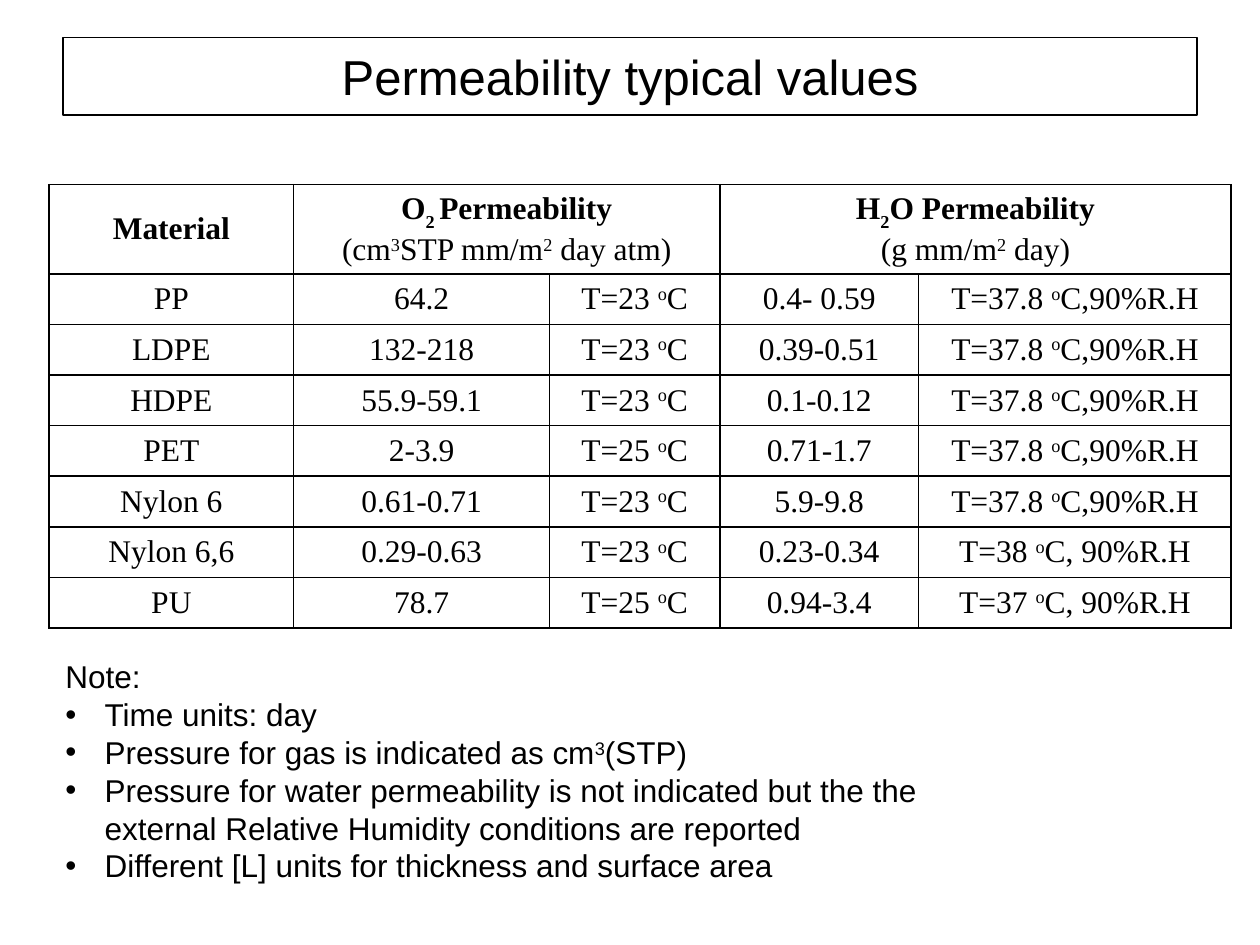
from lxml.etree import SubElement
from pptx import Presentation
from pptx.dml.color import RGBColor
from pptx.enum.shapes import MSO_SHAPE
from pptx.enum.text import MSO_ANCHOR, PP_ALIGN
from pptx.oxml.ns import qn
from pptx.util import Cm, Pt

COLORS = {"text": "000000", "line": "000000", "background": "FFFFFF"}
BASELINES = {"^": "30000", "_": "-30000"}


def write(paragraph, marked_text, font_name, size, bold=False, align=PP_ALIGN.CENTER):
    paragraph.alignment = align
    paragraph.font.name = font_name
    paragraph.font.size = Pt(size)
    paragraph.font.bold = bold
    paragraph.font.color.rgb = RGBColor.from_string(COLORS["text"])
    for part in marked_text.split("|"):
        run = paragraph.add_run()
        run.text = part.lstrip("^_")
        if part[0] in BASELINES:
            run._r.get_or_add_rPr().set("baseline", BASELINES[part[0]])


def add_borders(cell):
    properties = cell._tc.get_or_add_tcPr()
    for position, side in enumerate(("a:lnL", "a:lnR", "a:lnT", "a:lnB")):
        line = properties.makeelement(qn(side), {"w": str(Pt(1))})
        fill = SubElement(line, qn("a:solidFill"))
        SubElement(fill, qn("a:srgbClr"), val=COLORS["line"])
        properties.insert(position, line)


presentation = Presentation()
presentation.slide_width = Cm(25.4)
presentation.slide_height = Cm(19.05)
slide = presentation.slides.add_slide(presentation.slide_layouts[6])

title = slide.shapes.add_shape(MSO_SHAPE.RECTANGLE, Cm(1.27), Cm(0.76), Cm(22.86), Cm(1.56))
title.shadow.inherit = False
title.fill.background()
title.line.color.rgb = RGBColor.from_string(COLORS["line"])
title.line.width = Pt(0.75)
title.text_frame.vertical_anchor = MSO_ANCHOR.MIDDLE
write(title.text_frame.paragraphs[0], "Permeability typical values", "Arial", 28)

header = [
    ["Material"],
    ["O|_2 |Permeability", "(cm|^3|STP mm/m|^2| day atm)"],
    [],
    ["H|_2|O Permeability", "(g mm/m|^2| day)"],
    [],
]
materials = [
    ("PP", "64.2", "23", "0.4- 0.59", "37.8", "90%R.H"),
    ("LDPE", "132-218", "23", "0.39-0.51", "37.8", "90%R.H"),
    ("HDPE", "55.9-59.1", "23", "0.1-0.12", "37.8", "90%R.H"),
    ("PET", "2-3.9", "25", "0.71-1.7", "37.8", "90%R.H"),
    ("Nylon 6", "0.61-0.71", "23", "5.9-9.8", "37.8", "90%R.H"),
    ("Nylon 6,6", "0.29-0.63", "23", "0.23-0.34", "38", " 90%R.H"),
    ("PU", "78.7", "25", "0.94-3.4", "37", " 90%R.H"),
]
rows = [header]
for name, oxygen, oxygen_temperature, water, water_temperature, humidity in materials:
    rows.append([
        [name],
        [oxygen],
        [f"T={oxygen_temperature} |^o|C"],
        [water],
        [f"T={water_temperature} |^o|C,{humidity}"],
    ])

column_widths = [4.93, 5.16, 3.43, 4.01, 6.3]
row_heights = [1.8] + [1.02] * len(materials)
table = slide.shapes.add_table(
    len(rows), len(column_widths), Cm(0.99), Cm(3.72),
    Cm(sum(column_widths)), Cm(sum(row_heights)),
).table
table.first_row = False
table.horz_banding = False
for column, width in zip(table.columns, column_widths):
    column.width = Cm(width)
for row, height in zip(table.rows, row_heights):
    row.height = Cm(height)
for first in (1, 3):
    table.cell(0, first).merge(table.cell(0, first + 1))

for row_index, row in enumerate(rows):
    for column_index, lines in enumerate(row):
        cell = table.cell(row_index, column_index)
        cell.vertical_anchor = MSO_ANCHOR.MIDDLE
        cell.fill.solid()
        cell.fill.fore_color.rgb = RGBColor.from_string(COLORS["background"])
        add_borders(cell)
        for line_index, line in enumerate(lines):
            frame = cell.text_frame
            paragraph = frame.add_paragraph() if line_index else frame.paragraphs[0]
            write(paragraph, line, "Times New Roman", 18, bold=row_index + line_index == 0)

notes = [
    "Time units: day",
    "Pressure for gas is indicated as cm|^3|(STP)",
    "Pressure for water permeability is not indicated but the the "
    "external Relative Humidity conditions are reported",
    "Different [L] units for thickness and surface area",
]
note_box = slide.shapes.add_textbox(Cm(1.07), Cm(13.13), Cm(19.28), Cm(4.88))
note_box.text_frame.word_wrap = True
write(note_box.text_frame.paragraphs[0], "Note:", "Arial", 18, align=PP_ALIGN.LEFT)
for note in notes:
    paragraph = note_box.text_frame.add_paragraph()
    write(paragraph, note, "Arial", 18, align=PP_ALIGN.LEFT)
    properties = paragraph._p.get_or_add_pPr()
    properties.set("marL", str(Cm(0.79)))
    properties.set("indent", str(-Cm(0.79)))
    properties.insert(0, properties.makeelement(qn("a:buFont"), {"typeface": "Arial"}))
    properties.insert(1, properties.makeelement(qn("a:buChar"), {"char": "•"}))

presentation.save("out.pptx")
